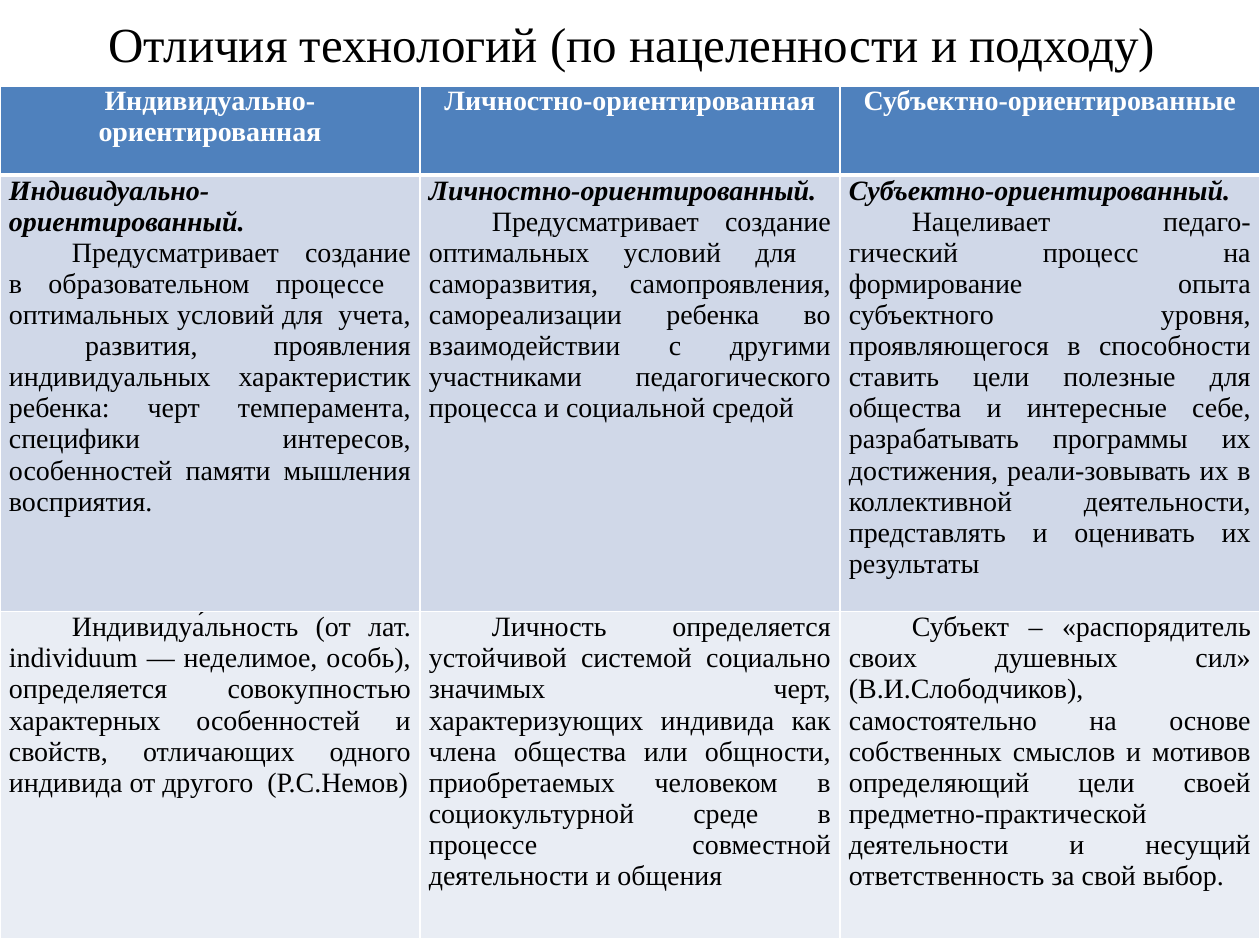
from lxml.etree import SubElement
from pptx import Presentation
from pptx.dml.color import RGBColor
from pptx.enum.text import MSO_ANCHOR, PP_ALIGN
from pptx.oxml.ns import qn
from pptx.util import Cm, Pt

FONT = "Times New Roman"
HEADER_FILL, ROW_FILLS = "4F81BD", ["D0D8E8", "E9EDF4"]
WHITE, BLACK = "FFFFFF", "000000"
ROW_HEIGHTS = [1.8, 8.48, 6.6]

TITLE = "Отличия технологий (по нацеленности и подходу)"
HEADERS = [
    "Индивидуально- ориентированная",
    "Личностно-ориентированная",
    "Субъектно-ориентированные",
]
APPROACHES = [
    ("Индивидуально-ориентированный.",
     "Предусматривает создание в образовательном процессе  оптимальных условий "
     "для  учета,  развития, проявления индивидуальных характеристик ребенка: черт "
     "темперамента, специфики интересов, особенностей памяти мышления восприятия."),
    ("Личностно-ориентированный.",
     "Предусматривает создание оптимальных условий для  саморазвития, "
     "самопроявления, самореализации ребенка во взаимодействии с другими "
     "участниками педагогического процесса и социальной средой"),
    ("Субъектно-ориентированный.",
     "Нацеливает педаго-гический процесс на формирование опыта субъектного уровня, "
     "проявляющегося в способности ставить цели полезные для общества и интересные "
     "себе, разрабатывать программы их достижения, реали-зовывать их в коллективной "
     "деятельности, представлять и оценивать их результаты"),
]
DEFINITIONS = [
    "Индивидуа́льность (от лат. individuum — неделимое, особь), определяется  "
    "совокупностью характерных особенностей и свойств, отличающих одного индивида "
    "от другого  (Р.С.Немов)",
    "Личность определяется устойчивой системой социально значимых черт, "
    "характеризующих индивида как члена общества или общности, приобретаемых "
    "человеком в социокультурной среде в процессе совместной деятельности и общения",
    "Субъект – «распорядитель своих душевных сил» (В.И.Слободчиков), самостоятельно "
    "на основе собственных смыслов и мотивов определяющий цели своей "
    "предметно-практической деятельности и несущий ответственность за свой выбор.",
]


def color(value):
    return RGBColor.from_string(value)


def write_paragraph(para, text, size, ink, align, bold=False, italic=False, indent=0):
    para.text = text
    para.alignment = align
    if indent:
        properties = para._p.get_or_add_pPr()
        properties.set("marL", "0")
        properties.set("indent", str(Cm(indent)))
    for span in para.runs:
        font = span.font
        font.name, font.size = FONT, Pt(size)
        font.bold, font.italic = bold, italic
        font.color.rgb = color(ink)


def set_borders(cell, bottom_width):
    properties = cell._tc.get_or_add_tcPr()
    for side, width in (("L", 1), ("R", 1), ("T", 1), ("B", bottom_width)):
        line = SubElement(properties, qn(f"a:ln{side}"), w=str(Pt(width)))
        fill = SubElement(line, qn("a:solidFill"))
        SubElement(fill, qn("a:srgbClr"), val=WHITE)


def prepare_cell(cell, fill, bottom_width=1):
    cell.margin_left = cell.margin_right = Cm(0.18)
    cell.margin_top = cell.margin_bottom = 0
    cell.vertical_anchor = MSO_ANCHOR.TOP
    set_borders(cell, bottom_width)
    cell.fill.solid()
    cell.fill.fore_color.rgb = color(fill)
    return cell.text_frame


def write_body(frame, text):
    write_paragraph(frame, text, 16, BLACK, PP_ALIGN.JUSTIFY, indent=1.27)


def add_title(page, left, top, width, height):
    box = page.shapes.add_textbox(left, top, width, height)
    frame = box.text_frame
    frame.word_wrap = True
    frame.vertical_anchor = MSO_ANCHOR.MIDDLE
    write_paragraph(frame.paragraphs[0], TITLE, 28, BLACK, PP_ALIGN.CENTER)


def add_comparison(page, left, top, width):
    height = Cm(sum(ROW_HEIGHTS))
    table = page.shapes.add_table(3, len(HEADERS), left, top, width, height).table
    for row, row_height in zip(table.rows, ROW_HEIGHTS):
        row.height = Cm(row_height)
    columns = zip(HEADERS, APPROACHES, DEFINITIONS)
    for index, (header, (term, aim), definition) in enumerate(columns):
        frame = prepare_cell(table.cell(0, index), HEADER_FILL, bottom_width=3)
        write_paragraph(frame.paragraphs[0], header, 16, WHITE, PP_ALIGN.CENTER, bold=True)

        frame = prepare_cell(table.cell(1, index), ROW_FILLS[0])
        write_paragraph(frame.paragraphs[0], term, 16, BLACK, PP_ALIGN.JUSTIFY,
                        bold=True, italic=True)
        write_body(frame.add_paragraph(), aim)

        frame = prepare_cell(table.cell(2, index), ROW_FILLS[1])
        write_body(frame.paragraphs[0], definition)


def main():
    deck = Presentation()
    deck.slide_width, deck.slide_height = Cm(25.4), Cm(19.05)
    page = deck.slides.add_slide(deck.slide_layouts[6])
    add_title(page, Cm(1.3), Cm(0), Cm(22.86), Cm(1.75))
    add_comparison(page, Cm(0), Cm(1.73), deck.slide_width)
    deck.save("out.pptx")


if __name__ == "__main__":
    main()
